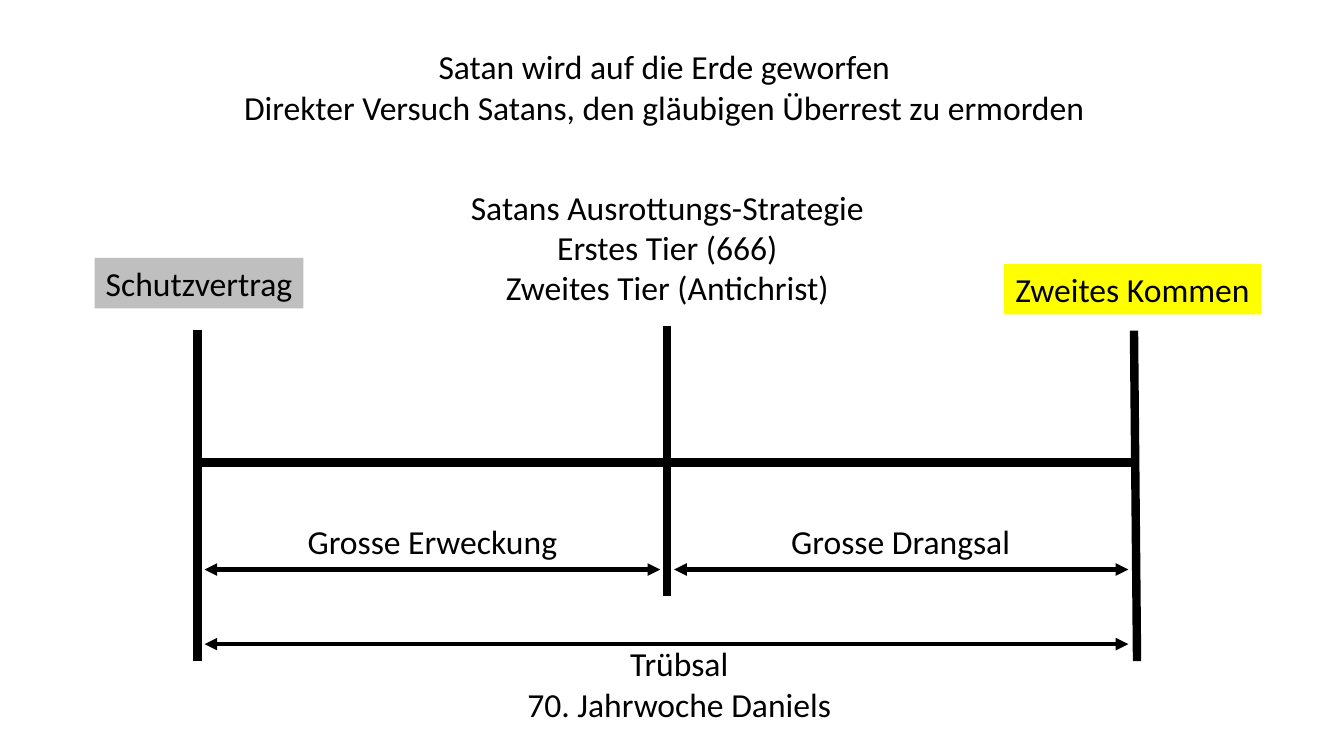
from lxml import etree
from pptx import Presentation
from pptx.dml.color import RGBColor
from pptx.enum.shapes import MSO_CONNECTOR
from pptx.enum.text import MSO_ANCHOR, MSO_AUTO_SIZE, PP_ALIGN
from pptx.oxml.ns import qn
from pptx.util import Pt

STRAIGHT = MSO_CONNECTOR.STRAIGHT
CENTER = PP_ALIGN.CENTER
TOP = MSO_ANCHOR.TOP
NO_AUTOFIT = MSO_AUTO_SIZE.NONE

BLACK = RGBColor(0x00, 0x00, 0x00)
GREY = RGBColor(0xBF, 0xBF, 0xBF)
YELLOW = RGBColor(0xFF, 0xFF, 0x00)

FONT = "Calibri"
TEXT_SIZE = 24
POST_WIDTH = 6
SPAN_WIDTH = 3

START_X, MIDDLE_X, END_X = 141.1, 476.6, 811
TIMELINE_Y = 330.5
HALVES_Y = 406.8
TRIBULATION_Y = 460.1
LABEL_Y = 368.6
SPAN_GAP = 5


def write_centered(frame, lines):
    frame.word_wrap = False
    frame.auto_size = NO_AUTOFIT
    frame.vertical_anchor = TOP
    frame.text = "\n".join(lines)
    for paragraph in frame.paragraphs:
        paragraph.alignment = CENTER
        for run in paragraph.runs:
            run.font.name = FONT
            run.font.size = Pt(TEXT_SIZE)
            run.font.color.rgb = BLACK


def set_title(slide, left, top, width, height, lines):
    title = slide.shapes.title
    title.left, title.top = Pt(left), Pt(top)
    title.width, title.height = Pt(width), Pt(height)
    write_centered(title.text_frame, lines)


def add_label(slide, left, top, width, height, lines, fill=None):
    label = slide.shapes.add_textbox(Pt(left), Pt(top), Pt(width), Pt(height))
    if fill is not None:
        label.fill.solid()
        label.fill.fore_color.rgb = fill
    write_centered(label.text_frame, lines)


def add_line(slide, x1, y1, x2, y2, width=POST_WIDTH):
    line = slide.shapes.add_connector(STRAIGHT, Pt(x1), Pt(y1), Pt(x2), Pt(y2))
    line.line.color.rgb = BLACK
    line.line.width = Pt(width)
    etree.SubElement(line._element.spPr, qn("a:effectLst"))
    return line


def add_span(slide, start, end, y):
    """Draw a double-headed arrow between two posts."""
    span = add_line(slide, start + SPAN_GAP, y, end - SPAN_GAP, y, SPAN_WIDTH)
    outline = span.line._get_or_add_ln()
    for arrowhead in ("a:headEnd", "a:tailEnd"):
        etree.SubElement(outline, qn(arrowhead), type="triangle")


def main():
    presentation = Presentation()
    presentation.slide_width, presentation.slide_height = Pt(960), Pt(540)
    slide = presentation.slides.add_slide(presentation.slide_layouts[5])

    set_title(slide, 164.2, 29.5, 620.6, 65.5, [
        "Satan wird auf die Erde geworfen",
        "Direkter Versuch Satans, den gläubigen Überrest zu ermorden"])

    add_line(slide, 810, 236.2, 812.2, 472.3)
    add_line(slide, START_X, 235.4, START_X, 472.3)
    add_line(slide, 139.7, TIMELINE_Y, 812.2, TIMELINE_Y)
    add_line(slide, MIDDLE_X, 232.6, MIDDLE_X, 425.5)

    add_label(slide, 67.7, 184.3, 149, 36, ["Schutzvertrag"], GREY)
    add_label(slide, 717.1, 188.6, 183.6, 36, ["Zweites Kommen"], YELLOW)
    add_label(slide, 327.6, 129.6, 298.1, 94.3, [
        "Satans Ausrottungs-Strategie",
        "Erstes Tier (666)",
        "Zweites Tier (Antichrist)"])

    add_span(slide, START_X, MIDDLE_X, HALVES_Y)
    add_span(slide, MIDDLE_X, END_X, HALVES_Y)
    add_span(slide, START_X, END_X, TRIBULATION_Y)
    add_label(slide, 211.7, LABEL_Y, 194.4, 36, ["Grosse Erweckung"])
    add_label(slide, 557.3, LABEL_Y, 172.1, 36, ["Grosse Drangsal"])
    add_label(slide, 368.6, 455.8, 233.3, 65.5,
              ["Trübsal", "70. Jahrwoche Daniels"])

    presentation.save("out.pptx")


if __name__ == "__main__":
    main()
